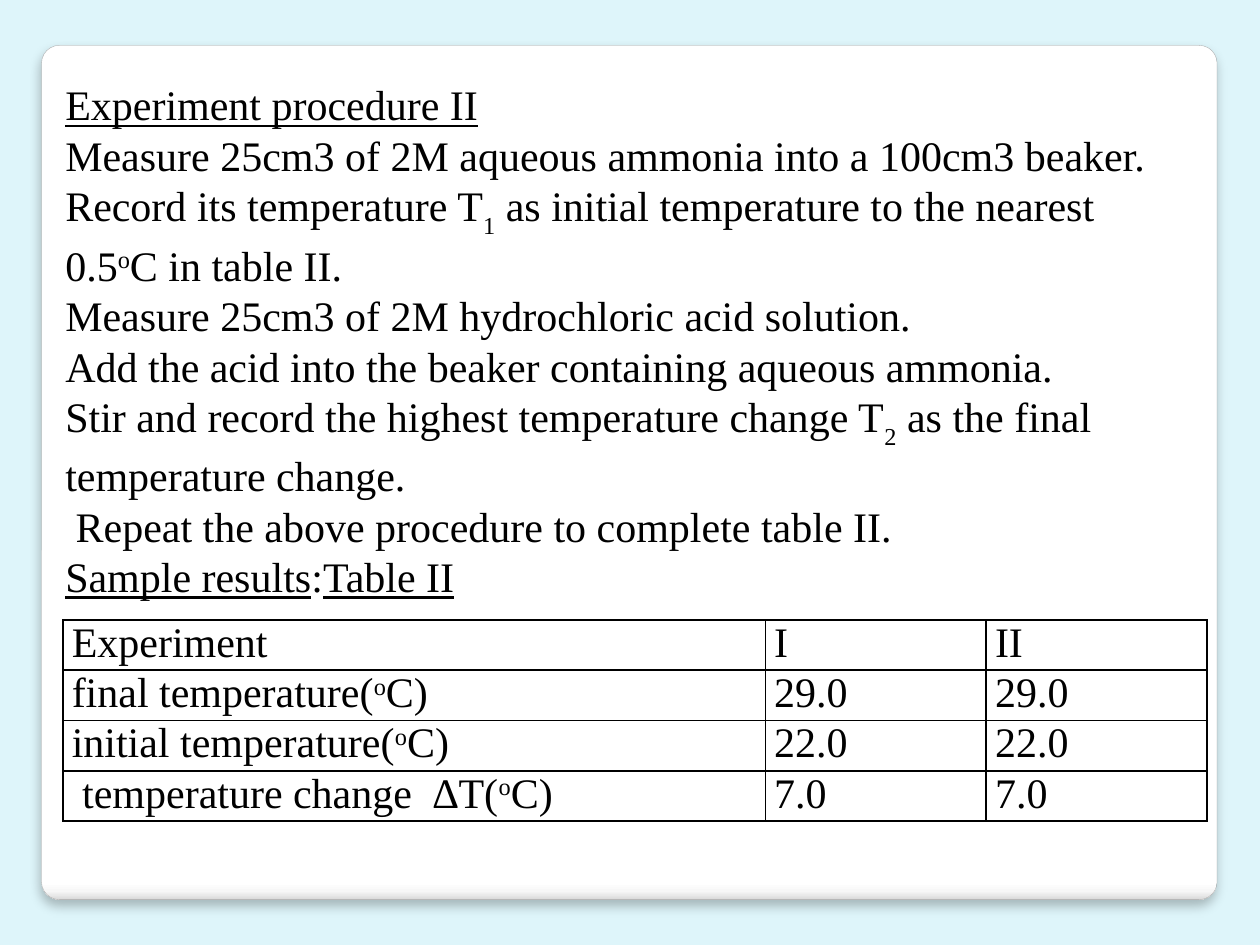
from lxml.etree import SubElement
from pptx import Presentation
from pptx.dml.color import RGBColor
from pptx.enum.shapes import MSO_SHAPE
from pptx.enum.text import MSO_ANCHOR
from pptx.oxml import parse_xml
from pptx.oxml.ns import nsdecls, qn
from pptx.util import Inches, Pt

COLORS = {"bg": "DEF5FA", "edge": "A4A4A4", "text": "000000"}
PANEL_STOPS = [(0, "FFFFFF"), (98, "FFFFFF"), (99, "F7F7F7"), (100, "DADADA")]
FONT = {"name": "Times New Roman", "size": Pt(24)}
SUB, SUP, UNDER = "sub", "sup", "under"
BASELINES = {SUB: "-30000", SUP: "30000"}
DEGREE = [("o", SUP), "C)"]

PROCEDURE = [
    [("Experiment procedure II", UNDER)],
    ["Measure 25cm3 of 2M aqueous ammonia into a 100cm3 beaker. Record its temperature T",
     ("1", SUB), " as initial temperature to the nearest 0.5", ("o", SUP), "C in table II."],
    ["Measure 25cm3 of 2M hydrochloric acid solution."],
    ["Add the acid into the beaker containing aqueous ammonia."],
    ["Stir and record the highest temperature change T", ("2", SUB),
     " as the final temperature change."],
    [" Repeat the above procedure to complete table II."],
    [("Sample results", UNDER), ":", ("Table II", UNDER)],
]
RESULTS = [
    [["Experiment"], ["I"], ["II"]],
    [["final temperature(", *DEGREE], ["29.0"], ["29.0"]],
    [["initial temperature(", *DEGREE], ["22.0"], ["22.0"]],
    [[" temperature change  ∆T(", *DEGREE], ["7.0"], ["7.0"]],
]


class SlideBuilder:
    """Holds the slide and its style; boxes are shares of the slide's size."""

    def __init__(self, prs):
        self.size = (prs.slide_width, prs.slide_height) * 2
        self.s = prs.slides.add_slide(prs.slide_layouts[6])
        fill = self.s.background.fill
        fill.solid()
        fill.fore_color.rgb = self.color("bg")

    @staticmethod
    def color(name):
        return RGBColor.from_string(COLORS[name])

    def box(self, *shares):
        return [round(share * full) for share, full in zip(shares, self.size)]

    def add_runs(self, p, parts):
        """Fill a paragraph with plain strings and (text, style) pairs."""
        for part in parts:
            text, style = (part, None) if isinstance(part, str) else part
            r = p.add_run()
            r.text = text
            for key, value in FONT.items():
                setattr(r.font, key, value)
            r.font.color.rgb = self.color("text")
            if style == UNDER:
                r.font.underline = True
            elif style:
                r.font._element.set("baseline", BASELINES[style])

    def panel(self, *shares):
        sp = self.s.shapes.add_shape(MSO_SHAPE.ROUNDED_RECTANGLE, *self.box(*shares))
        sp.adjustments[0] = 0.021
        sp.line.color.rgb = self.color("edge")
        sp.line.width = Pt(0.16)
        ln = sp._element.spPr.find(qn("a:ln"))
        stops = "".join(f'<a:gs pos="{pos * 1000}"><a:srgbClr val="{rgb}"/></a:gs>'
                        for pos, rgb in PANEL_STOPS)
        ln.addprevious(parse_xml(
            f'<a:gradFill {nsdecls("a")}><a:gsLst>{stops}</a:gsLst>'
            '<a:lin ang="5400000" scaled="0"/></a:gradFill>'))
        ln.addnext(parse_xml(
            f'<a:effectLst {nsdecls("a")}><a:outerShdw blurRad="{Pt(6)}" dist="{Pt(4)}" '
            f'dir="5400000" rotWithShape="0"><a:srgbClr val="{COLORS["text"]}">'
            '<a:alpha val="25000"/></a:srgbClr></a:outerShdw></a:effectLst>'))

    def text(self, paragraphs, *shares):
        tf = self.s.shapes.add_textbox(*self.box(*shares)).text_frame
        tf.word_wrap = True
        tf.vertical_anchor = MSO_ANCHOR.TOP
        for i, parts in enumerate(paragraphs):
            self.add_runs(tf.add_paragraph() if i else tf.paragraphs[0], parts)

    def table(self, rows, col_shares, *shares):
        box = self.box(*shares)
        frame = self.s.shapes.add_table(len(rows), len(col_shares), *box)
        for col, share in zip(frame.table.columns, col_shares):
            col.width = round(box[2] * share)
        for row, contents in zip(frame.table.rows, rows):
            for cell, parts in zip(row.cells, contents):
                cell.margin_left = cell.margin_right = Inches(0.07)
                cell.margin_top = cell.margin_bottom = 0
                self.borders(cell)
                cell.fill.background()
                self.add_runs(cell.text_frame.paragraphs[0], parts)

    @staticmethod
    def borders(cell):
        tcPr = cell._tc.get_or_add_tcPr()
        for side in "LRTB":
            ln = SubElement(tcPr, qn(f"a:ln{side}"), w=str(Pt(1)))
            fill = SubElement(ln, qn("a:solidFill"))
            SubElement(fill, qn("a:srgbClr"), val=COLORS["text"])


def main():
    prs = Presentation()
    prs.slide_width, prs.slide_height = Inches(10), Inches(7.5)
    slide = SlideBuilder(prs)
    slide.panel(0.033, 0.048, 0.933, 0.904)
    slide.table(RESULTS, (0.614, 0.193, 0.193), 0.05, 0.656, 0.908, 0.213)
    slide.text(PROCEDURE, 0.042, 0.077, 0.917, 0.605)
    prs.save("out.pptx")


if __name__ == "__main__":
    main()
